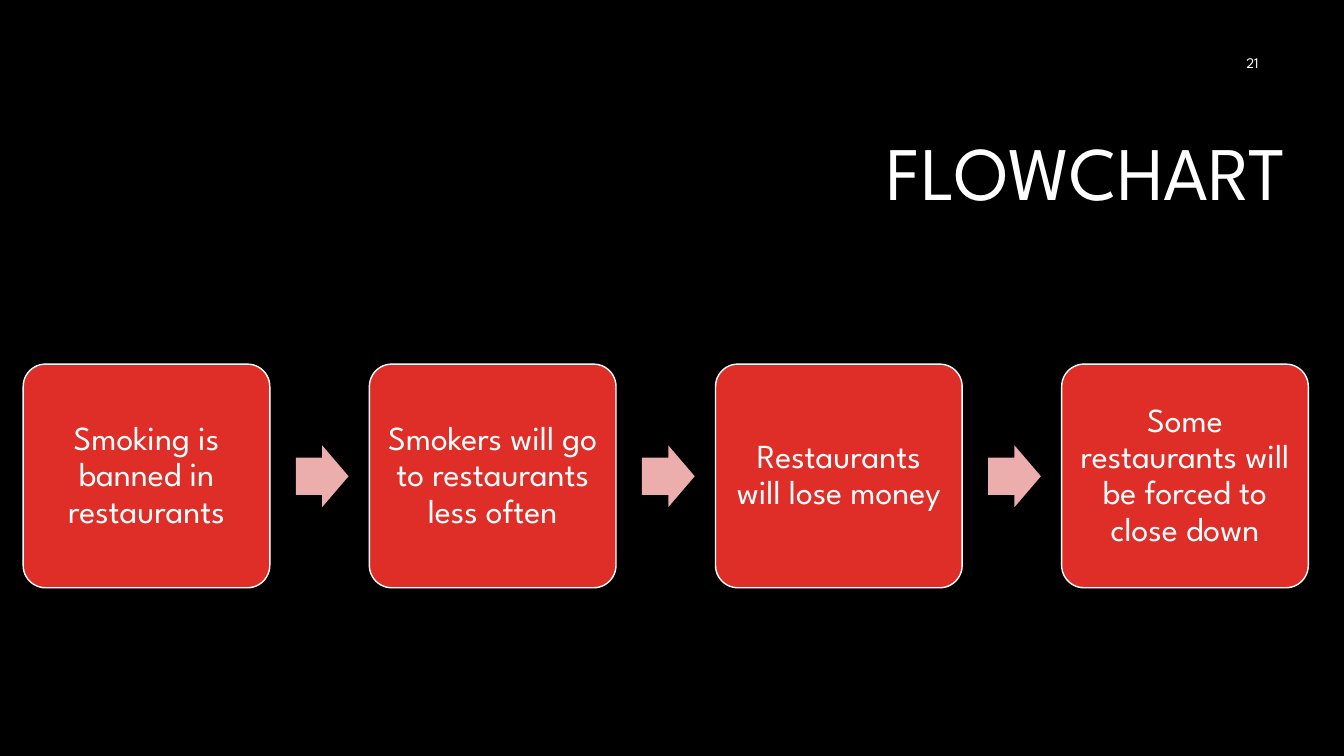
from pptx import Presentation
from pptx.dml.color import RGBColor
from pptx.enum.shapes import MSO_SHAPE
from pptx.enum.text import MSO_ANCHOR, PP_ALIGN
from pptx.util import Inches, Pt

MARGIN = 0.23
COLUMN = 10.3 / 12  # four columns per flowchart step
ROW = 7.5 / 12
STEP = 4


def color(hex_code):
    return RGBColor.from_string(hex_code)


class FlowchartSlide:
    font = "League Spartan"
    background = "000000"
    ink = "FFFFFF"
    box_fill = "DF2E28"
    arrow_fill = "ECADAD"

    def __init__(self, presentation):
        self.slide = presentation.slides.add_slide(presentation.slide_layouts[6])
        fill = self.slide.background.fill
        fill.solid()
        fill.fore_color.rgb = color(self.background)

    def place(self, column, row, columns, rows):
        return (Inches(MARGIN + column * COLUMN), Inches(row * ROW),
                Inches(columns * COLUMN), Inches(rows * ROW))

    def add_text(self, shape, text, size, align, spacing=1.0):
        frame = shape.text_frame
        frame.word_wrap = True
        frame.vertical_anchor = MSO_ANCHOR.MIDDLE
        paragraph = frame.paragraphs[0]
        paragraph.alignment = align
        paragraph.line_spacing = spacing
        run = paragraph.add_run()
        run.text = text
        run.font.name = self.font
        run.font.size = Pt(size)
        run.font.color.rgb = color(self.ink)
        return frame

    def label(self, text, cell, size, spacing=1.0):
        shape = self.slide.shapes.add_textbox(*self.place(*cell))
        self.add_text(shape, text, size, PP_ALIGN.RIGHT, spacing)

    def solid(self, kind, cell, fill, adjustments):
        shape = self.slide.shapes.add_shape(kind, *self.place(*cell))
        shape.shadow.inherit = False
        shape.fill.solid()
        shape.fill.fore_color.rgb = color(fill)
        for index, value in enumerate(adjustments):
            shape.adjustments[index] = value
        return shape

    def box(self, text, column):
        shape = self.solid(MSO_SHAPE.ROUNDED_RECTANGLE,
                           (column, 5.78, 2.85, 3.55), self.box_fill, [0.1])
        shape.line.color.rgb = color(self.ink)
        shape.line.width = Pt(1)
        frame = self.add_text(shape, text, 24, PP_ALIGN.CENTER, 0.9)
        frame.margin_left = frame.margin_right = Inches(0.1)
        frame.margin_top = frame.margin_bottom = Inches(0.1)

    def arrow(self, column):
        shape = self.solid(MSO_SHAPE.RIGHT_ARROW,
                           (column, 7.07, 0.61, 0.98), self.arrow_fill, [0.6, 0.5])
        shape.line.fill.background()


def main():
    presentation = Presentation()
    presentation.slide_width = Inches(13.33)
    presentation.slide_height = Inches(7.5)
    flowchart = FlowchartSlide(presentation)

    # Title and page number
    flowchart.label("FLOWCHART", (3.47, 1.66, 11.24, 2.26), 54, 0.9)
    flowchart.label("21", (10.89, 0.67, 3.5, 0.64), 10.5)

    # Steps, with an arrow before each one after the first
    steps = [
        "Smoking is banned in restaurants",
        "Smokers will go to restaurants less often",
        "Restaurants will lose money",
        "Some restaurants will be forced to close down",
    ]
    for index, text in enumerate(steps):
        if index:
            flowchart.arrow(index * STEP - 0.85)
        flowchart.box(text, index * STEP)

    presentation.save("out.pptx")


if __name__ == "__main__":
    main()
